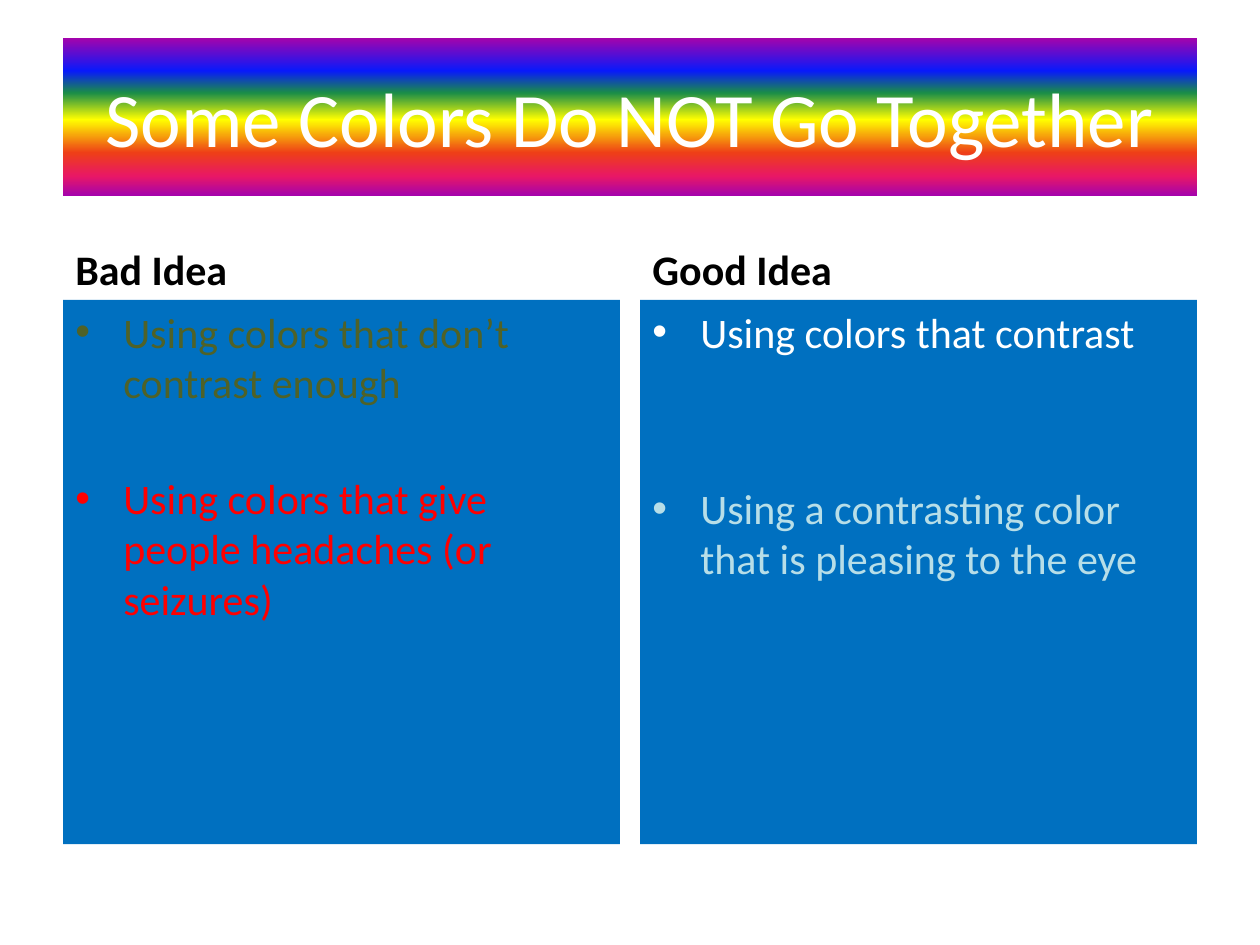
from pptx import Presentation
from pptx.dml.color import RGBColor
from pptx.enum.shapes import MSO_SHAPE as Shape
from pptx.enum.text import MSO_ANCHOR as Anchor, PP_ALIGN as Align
from pptx.oxml.ns import qn
from pptx.util import Inches, Pt
from lxml.etree import SubElement as Sub


def rgb(code):
    return RGBColor.from_string(code)


def style(para, text, size, color, bold=False):
    para.text = text
    font = para.font
    font.name, font.size, font.bold = "Calibri", Pt(size), bold
    font.color.rgb = rgb(color)


deck = Presentation()
deck.slide_width, deck.slide_height = Inches(10), Inches(7.5)
slide = deck.slides.add_slide(deck.slide_layouts[6])
shapes = slide.shapes

# Rainbow title
title = shapes.add_shape(Shape.RECTANGLE, Inches(0.5), Inches(0.3), Inches(9), Inches(1.25))
title.shadow.inherit = False
title.line.fill.background()
title.fill.gradient()
grad = title.fill._xPr.find(qn("a:gradFill"))
for part in list(grad):
    grad.remove(part)
stops = Sub(grad, qn("a:gsLst"))
for pos, color in [(0, "A603AB"), (21, "0819FB"), (35, "1A8D48"), (52, "FFFF00"),
                   (73, "EE3F17"), (88, "E81766"), (100, "A603AB")]:
    stop = Sub(stops, qn("a:gs"), pos=str(pos * 1000))
    Sub(stop, qn("a:srgbClr"), val=color)
Sub(grad, qn("a:lin"), ang="5400000", scaled="0")
frame = title.text_frame
frame.vertical_anchor = Anchor.MIDDLE
para = frame.paragraphs[0]
style(para, "Some Colors Do NOT Go Together", 44, "FFFFFF")
para.alignment = Align.CENTER

# Columns: left edge, heading, gap between points, points
cols = [
    (0.5, "Bad Idea", 37.5, [
        ("Using colors that don’t contrast enough", "4F6228"),
        ("Using colors that give people headaches (or seizures)", "FF0000")]),
    (5.08, "Good Idea", 72, [
        ("Using colors that contrast", "FFFFFF"),
        ("Using a contrasting color that is pleasing to the eye", "B7DEE8")]),
]
wide = Inches(4.42)
for left, head, gap, points in cols:
    # Heading
    label = shapes.add_textbox(Inches(left), Inches(1.68), wide, Inches(0.7))
    frame = label.text_frame
    frame.word_wrap = True
    frame.vertical_anchor = Anchor.BOTTOM
    style(frame.paragraphs[0], head, 24, "000000", True)

    # Panel with bullets
    panel = shapes.add_shape(Shape.RECTANGLE, Inches(left), Inches(2.38), wide, Inches(4.32))
    panel.shadow.inherit = False
    panel.fill.solid()
    panel.fill.fore_color.rgb = rgb("0070C0")
    panel.line.fill.background()
    frame = panel.text_frame
    frame.vertical_anchor = Anchor.TOP
    for i, (text, color) in enumerate(points):
        para = frame.add_paragraph() if i else frame.paragraphs[0]
        style(para, text, 24, color)
        para.alignment = Align.LEFT
        para.space_before = Pt(gap if i else 0)
        props = para._p.get_or_add_pPr()
        props.set("marL", str(Inches(0.38)))
        props.set("indent", str(-Inches(0.38)))
        bullet = [props.makeelement(qn("a:buFont"), {"typeface": "Arial"}),
                  props.makeelement(qn("a:buChar"), {"char": "•"})]
        for item in bullet:
            props.find(qn("a:defRPr")).addprevious(item)

deck.save("out.pptx")
